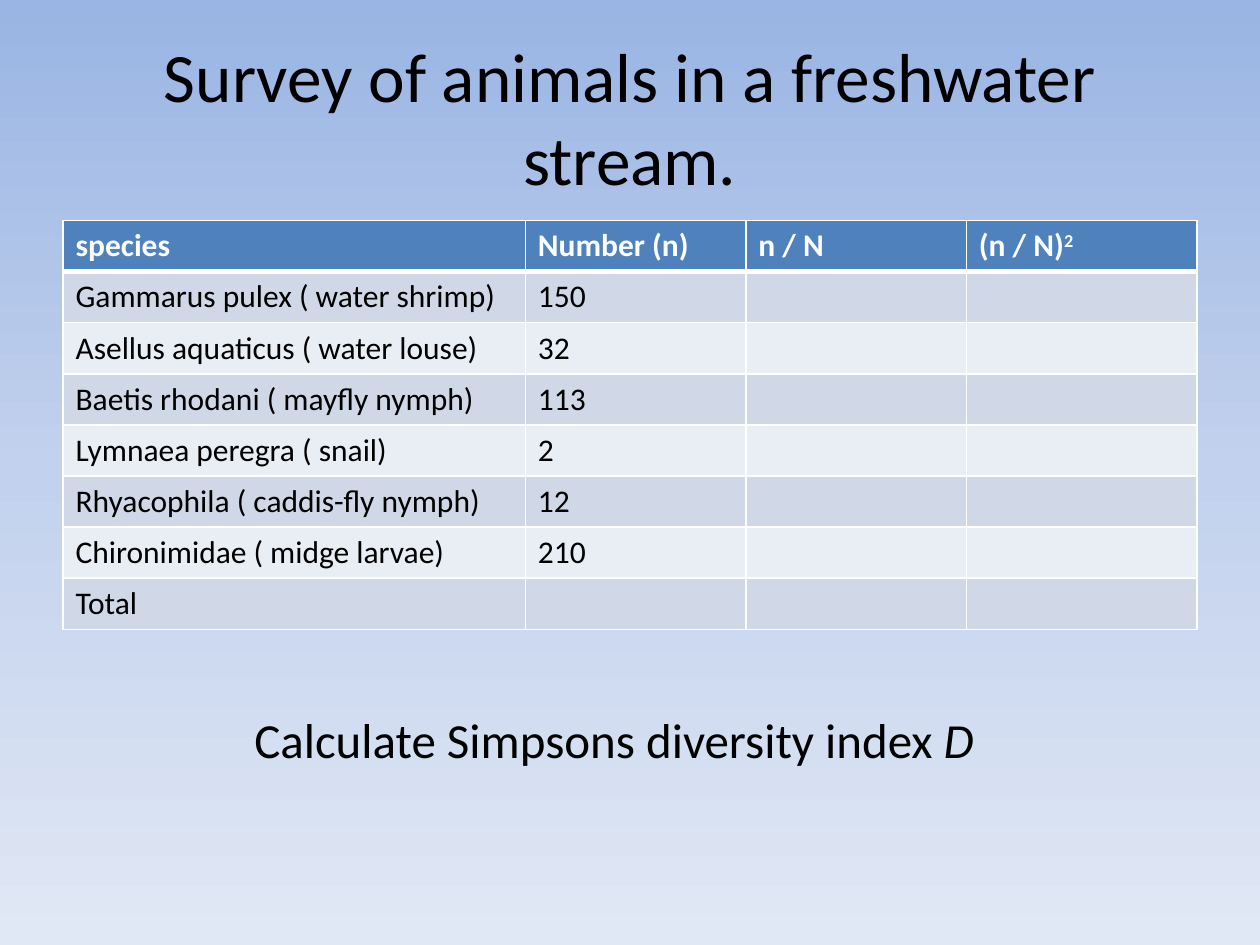
from copy import deepcopy

from lxml import etree
from pptx import Presentation
from pptx.dml.color import RGBColor
from pptx.enum.text import MSO_ANCHOR, MSO_AUTO_SIZE, PP_ALIGN
from pptx.oxml import parse_xml
from pptx.oxml.ns import nsdecls
from pptx.util import Inches, Pt

FONT = "Calibri"
BLACK, WHITE = "000000", "FFFFFF"
HEADER_FILL, BAND_FILLS = "4F81BD", ("D0D8E8", "E9EDF4")
SKY = ((0, "9AB5E4"), (0.5, "C2D1ED"), (1, "E1E8F5"))

COLUMN_WIDTHS = (3.67, 1.75, 1.75, 1.83)
HEADERS = ("species", "Number (n)", "n / N", "(n / N)")
SURVEY = (
    ("Gammarus pulex ( water shrimp)", "150"),
    ("Asellus aquaticus ( water louse)", "32"),
    ("Baetis rhodani ( mayfly nymph)", "113"),
    ("Lymnaea peregra ( snail)", "2"),
    ("Rhyacophila ( caddis-fly nymph)", "12"),
    ("Chironimidae ( midge larvae)", "210"),
    ("Total", ""),
)


def rgb(value):
    return RGBColor.from_string(value)


def style(p, size, color=BLACK, bold=False):
    font = p.font
    font.name, font.size, font.bold = FONT, Pt(size), bold
    font.color.rgb = rgb(color)


def paint_background(slide):
    fill = slide.background.fill
    fill.gradient()
    fill.gradient_angle = 270
    first = fill._fill._gradFill.gsLst[0]
    first.addnext(deepcopy(first))
    for stop, (position, color) in zip(fill.gradient_stops, SKY):
        stop.position = position
        stop.color.rgb = rgb(color)


def add_title(slide, left, top, width, height):
    sp = slide.shapes.title
    sp.left, sp.top, sp.width, sp.height = left, top, width, height
    tf = sp.text_frame
    tf.text = "Survey of animals in a freshwater stream."
    tf.vertical_anchor = MSO_ANCHOR.MIDDLE
    p = tf.paragraphs[0]
    p.alignment = PP_ALIGN.CENTER
    style(p, 39.6)


def set_borders(cell, bottom):
    """Draw white cell borders, 1 pt wide except for the given bottom width."""
    tcPr = cell._tc.get_or_add_tcPr()
    for i, (side, width) in enumerate(zip("LRTB", (1, 1, 1, bottom))):
        ln = parse_xml(f'<a:ln{side} {nsdecls("a")} w="{Pt(width)}"/>')
        solid = etree.SubElement(ln, ln.tag.replace(f"ln{side}", "solidFill"))
        etree.SubElement(solid, solid.tag.replace("solidFill", "srgbClr"), val=WHITE)
        tcPr.insert(i, ln)


def add_survey_table(slide, left, top, width, height):
    rows = (HEADERS, *SURVEY)
    table = slide.shapes.add_table(
        len(rows), len(COLUMN_WIDTHS), left, top, width, height).table
    for column, column_width in zip(table.columns, COLUMN_WIDTHS):
        column.width = Inches(column_width)
    for i, texts in enumerate(rows):
        header = i == 0
        for j in range(len(COLUMN_WIDTHS)):
            cell = table.cell(i, j)
            cell.text = texts[j] if j < len(texts) else ""
            style(cell.text_frame.paragraphs[0], 18, WHITE if header else BLACK, header)
            cell.fill.solid()
            cell.fill.fore_color.rgb = rgb(HEADER_FILL if header else BAND_FILLS[(i - 1) % 2])
            # The first body row shares the thick rule under the header
            set_borders(cell, 3 if header else 1)
            if i == 1:
                cell._tc.tcPr[2].set("w", str(Pt(3)))
    square = table.cell(0, 3).text_frame.paragraphs[0].add_run()
    square.text = "2"
    square.font._element.set("baseline", "30000")


def add_task(slide, left, top, width, height):
    tf = slide.shapes.add_textbox(left, top, width, height).text_frame
    tf.word_wrap = True
    tf.auto_size = MSO_AUTO_SIZE.SHAPE_TO_FIT_TEXT
    p = tf.paragraphs[0]
    p.add_run().text = "Calculate Simpsons diversity index "
    index = p.add_run()
    index.text = "D"
    index.font.italic = True
    style(p, 28)


def main():
    prs = Presentation()
    prs.slide_width, prs.slide_height = Inches(10), Inches(7.5)
    slide = prs.slides.add_slide(prs.slide_layouts[5])
    paint_background(slide)
    add_title(slide, Inches(0.5), Inches(0.3), Inches(9), Inches(1.25))
    add_survey_table(slide, Inches(0.5), Inches(1.75), Inches(9), Inches(3.24))
    add_task(slide, Inches(1.92), Inches(5.58), Inches(6.83), Inches(0.57))
    prs.save("out.pptx")


if __name__ == "__main__":
    main()
